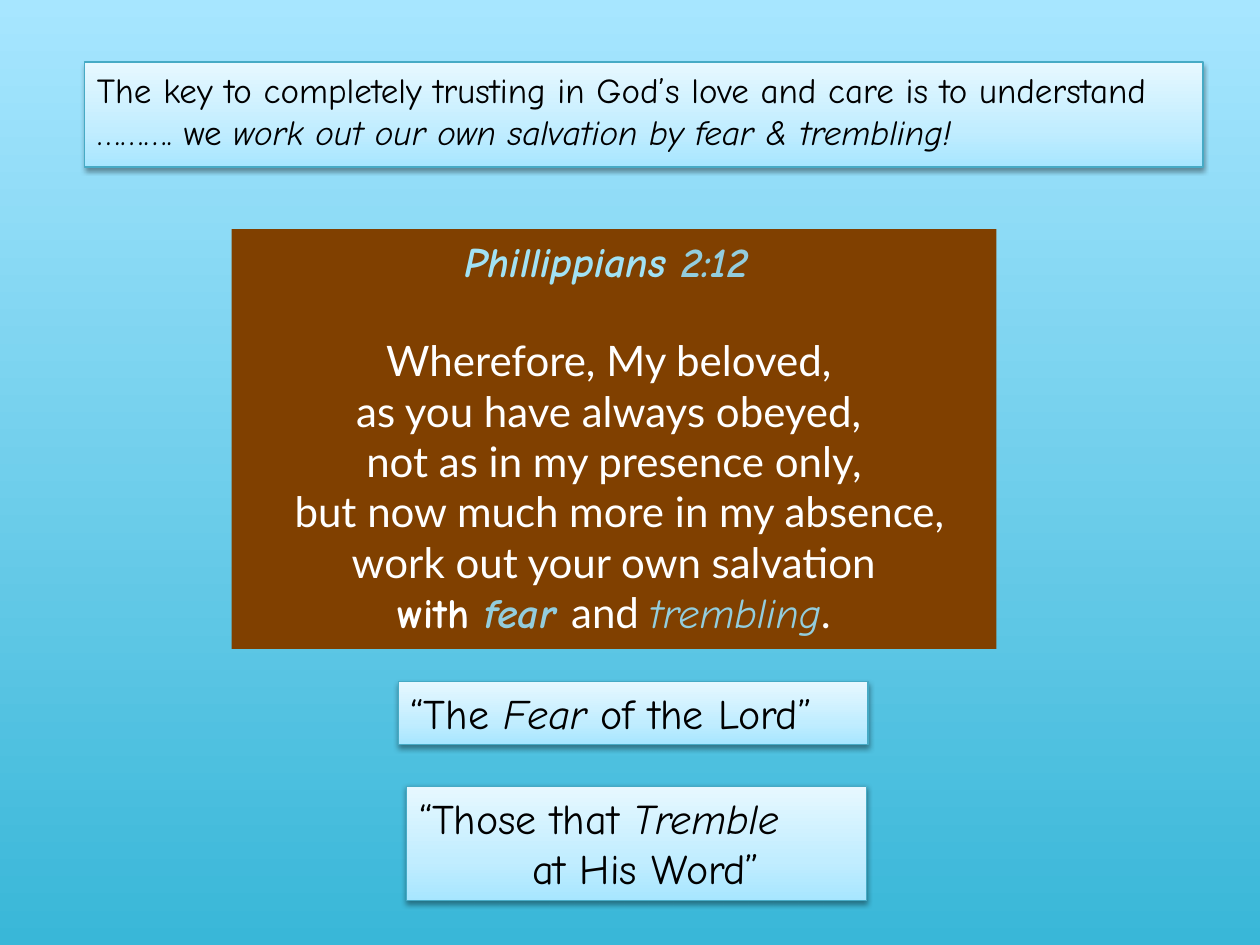
from lxml.etree import SubElement
from pptx import Presentation
from pptx.dml.color import RGBColor
from pptx.enum.shapes import MSO_SHAPE
from pptx.enum.text import MSO_ANCHOR, MSO_AUTO_SIZE, PP_ALIGN
from pptx.oxml.ns import qn
from pptx.util import Cm, Pt

SKY = [(0, "39B7D8"), (100, "A7E6FF")]
PALE = [(0, "A7E6FF"), (35, "C1EDFF"), (100, "E7F8FF")]
BLACK, WHITE, AQUA, BLUE = "000000", "FFFFFF", "A1E2F4", "93CDDD"
BROWN, EDGE = "804000", "46AAC5"
HAND, PLAIN = "Comic Neue", "Lato"


def color(code):
    """Turn a hex string into a colour."""
    return RGBColor.from_string(code)


def place(shape, left, top, width, height):
    """Put a shape at a position given in centimetres."""
    shape.left, shape.top = Cm(left), Cm(top)
    shape.width, shape.height = Cm(width), Cm(height)


def add_panel(slide, *box):
    """Add a rectangle without outline or shadow."""
    panel = slide.shapes.add_shape(MSO_SHAPE.RECTANGLE, *map(Cm, box))
    panel.shadow.inherit = False
    panel.line.fill.background()
    return panel


def fill_upward(shape, stops):
    """Fill a shape with a gradient that runs from bottom to top."""
    shape.fill.gradient()
    shape.fill.gradient_angle = 90
    stop_list = shape._element.spPr.find(qn("a:gradFill")).find(qn("a:gsLst"))
    for stop in list(stop_list):
        stop_list.remove(stop)
    for position, code in stops:
        stop = SubElement(stop_list, qn("a:gs"), pos=str(position * 1000))
        SubElement(stop, qn("a:srgbClr"), val=code)


def cast_shadow(shape, distance, opacity):
    """Give a shape a soft shadow below it."""
    shape.shadow.inherit = False
    effects = shape._element.spPr.find(qn("a:effectLst"))
    shadow = SubElement(effects, qn("a:outerShdw"), blurRad=str(Pt(3.1)),
                        dist=str(Pt(distance)), dir="5400000", rotWithShape="0")
    tint = SubElement(shadow, qn("a:srgbClr"), val=BLACK)
    SubElement(tint, qn("a:alpha"), val=str(opacity * 1000))


def style_card(card):
    """Give a card its pale gradient, thin edge and shadow."""
    fill_upward(card, PALE)
    card.line.color.rgb = color(EDGE)
    card.line.width = Pt(0.75)
    cast_shadow(card, 1.6, 38)


def write(shape, lines, size, align=PP_ALIGN.LEFT):
    """Write lines of (text, font, colour, style) runs and return the paragraphs."""
    frame = shape.text_frame
    frame.word_wrap = True
    frame.auto_size = MSO_AUTO_SIZE.SHAPE_TO_FIT_TEXT
    frame.vertical_anchor = MSO_ANCHOR.TOP
    for number, runs in enumerate(lines):
        paragraph = frame.add_paragraph() if number else frame.paragraphs[0]
        paragraph.alignment = align
        for text, font, code, style in runs:
            run = paragraph.add_run()
            run.text = text
            run.font.name, run.font.size = font, Pt(size)
            run.font.color.rgb = color(code)
            run.font.bold, run.font.italic = "b" in style, "i" in style
    return frame.paragraphs


def add_backdrop(slide):
    """Cover the slide with the sky gradient, behind everything else."""
    backdrop = add_panel(slide, 0, 0, 25.4, 19.05)
    fill_upward(backdrop, SKY)
    cast_shadow(backdrop, 1.8, 35)
    slide.shapes._spTree.insert(2, backdrop._element)


def add_key_thought(slide):
    """Set the slide's key thought in the title placeholder."""
    key_thought = slide.shapes.title
    place(key_thought, 1.7, 1.25, 22.55, 1.96)
    style_card(key_thought)
    write(key_thought, [[
        ("The key to completely trusting in God’s love and care is to "
         "understand ………. we ", HAND, BLACK, ""),
        ("work out our own salvation by fear & trembling!", HAND, BLACK, "i"),
    ]], 20)


def add_verse(slide):
    """Add the brown panel with the verse and its reference."""
    verse = add_panel(slide, 4.67, 4.62, 15.42, 8.46)
    verse.fill.solid()
    verse.fill.fore_color.rgb = color(BROWN)
    reference = [("Phillippians ", HAND, AQUA, "bi"), ("2:12 ", HAND, BLUE, "bi")]
    body = ["Wherefore, My beloved, ", "as you have always obeyed, ",
            "not as in my presence only,", " but now much more in my absence,",
            " work out your own salvation "]
    ending = [("with ", HAND, WHITE, "b"), ("fear ", HAND, BLUE, "bi"),
              ("and ", PLAIN, WHITE, ""), ("trembling", HAND, BLUE, "i"),
              (".", PLAIN, WHITE, "")]
    lines = [reference, *([(text, PLAIN, WHITE, "")] for text in body), ending]
    paragraphs = write(verse, lines, 24, PP_ALIGN.CENTER)
    paragraphs[0].space_after = Pt(28)


def add_card(slide, box, lines):
    """Add a pale card with a quoted phrase."""
    card = add_panel(slide, *box)
    style_card(card)
    return write(card, [[(text, HAND, BLACK, style) for text, style in line]
                        for line in lines], 24)


def main():
    """Build the slide and save it."""
    deck = Presentation()
    deck.slide_width, deck.slide_height = Cm(25.4), Cm(19.05)
    slide = deck.slides.add_slide(deck.slide_layouts[5])
    add_backdrop(slide)
    add_key_thought(slide)
    add_verse(slide)
    add_card(slide, (8.03, 13.74, 9.47, 1.27),
             [[("“The ", ""), ("Fear", "i"), (" of the Lord”", "")]])
    tremble = add_card(slide, (8.2, 15.85, 9.27, 2.31),
                       [[("“Those that ", ""), ("Tremble", "i")],
                        [("at His Word”", "")]])
    tremble[1]._p.get_or_add_pPr().set("marL", str(Cm(2.28)))
    deck.save("out.pptx")


if __name__ == "__main__":
    main()
